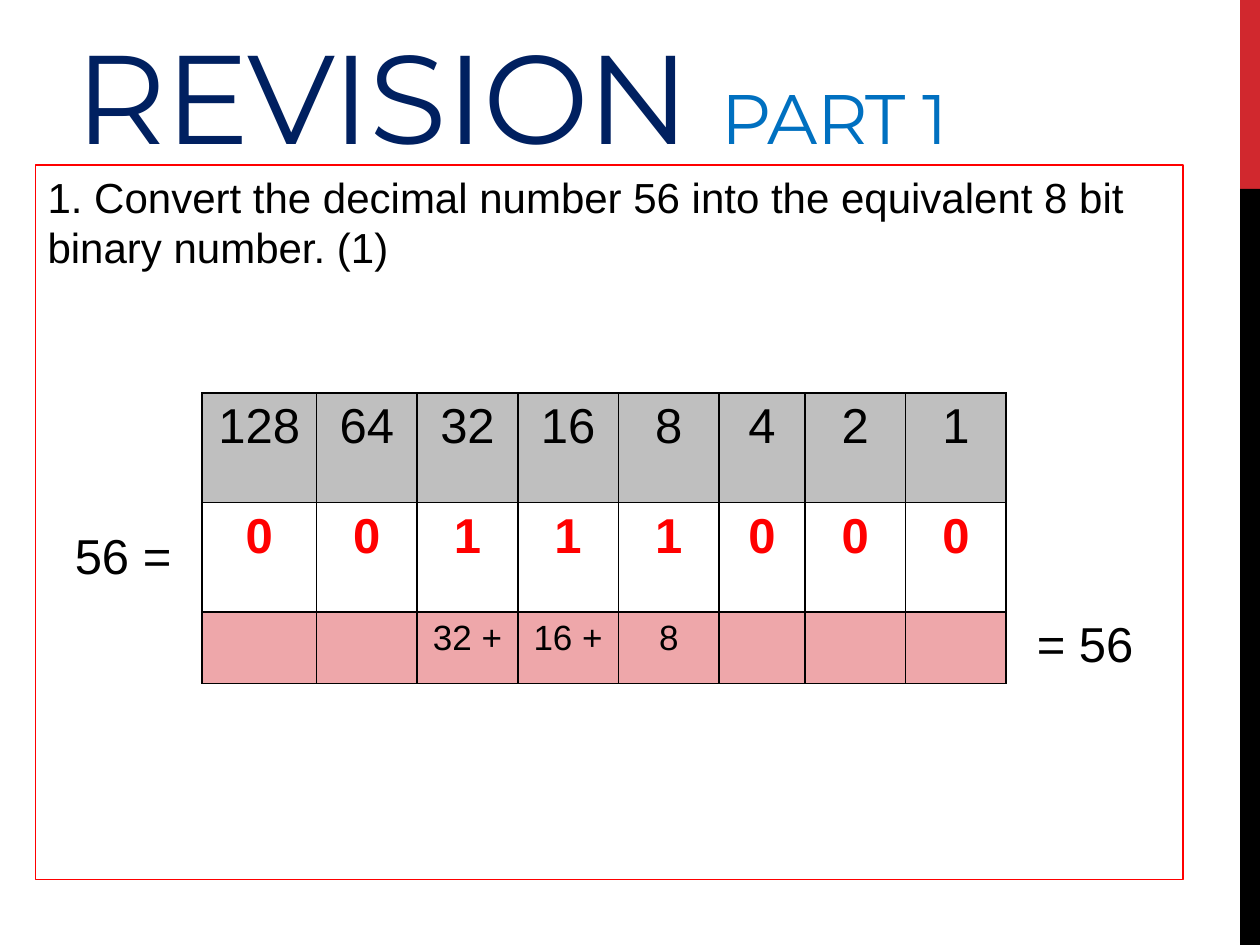
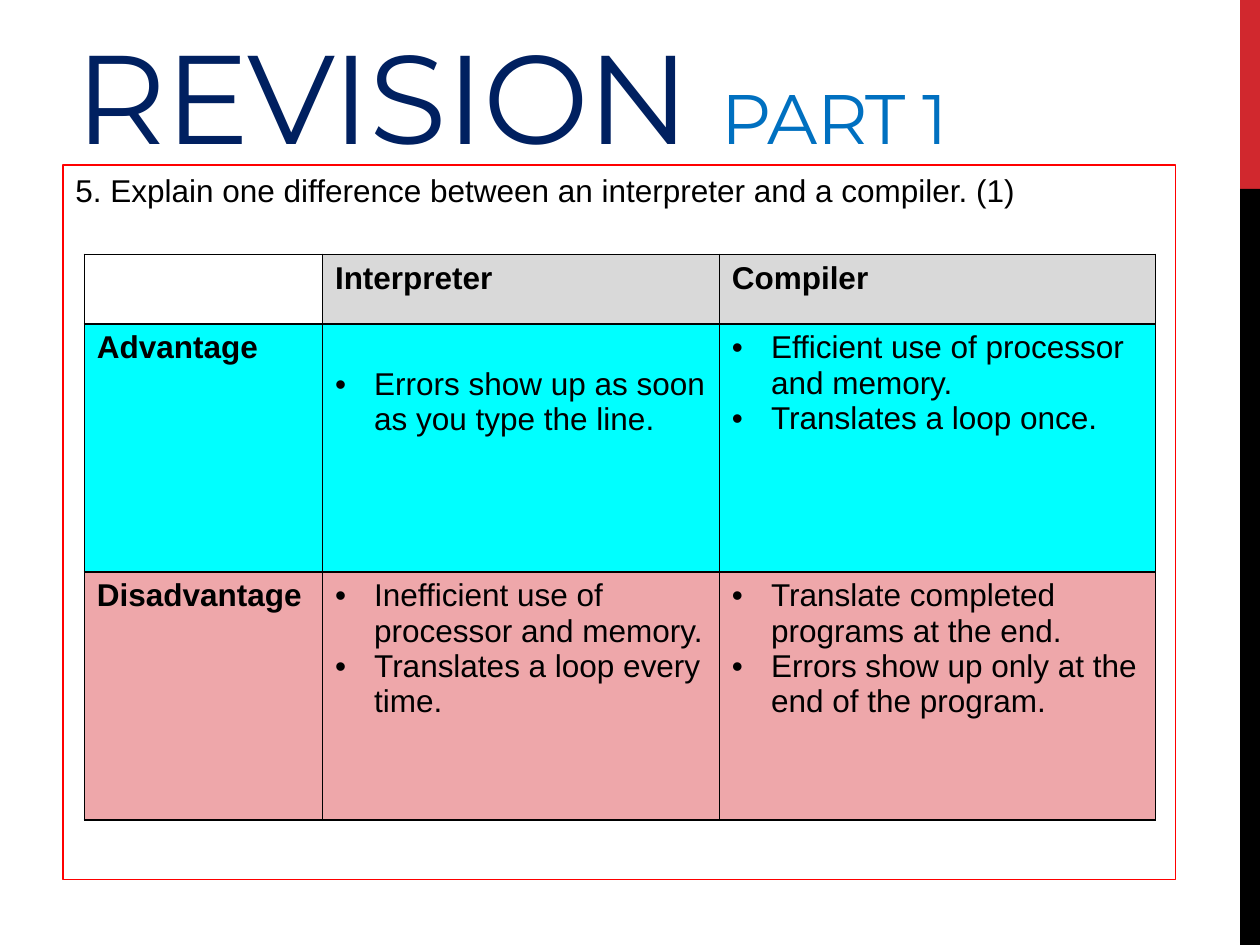
"""Build two revision slides: binary conversion and interpreter versus compiler."""
from lxml.etree import SubElement
from pptx import Presentation
from pptx.dml.color import RGBColor
from pptx.enum.shapes import MSO_SHAPE
from pptx.enum.text import MSO_ANCHOR, PP_ALIGN
from pptx.oxml.ns import qn
from pptx.util import Cm, Pt

COLOURS = {
    "black": "000000", "red": "FF0000", "band": "D1282E",
    "navy": "002060", "blue": "0070C0", "grey": "BFBFBF",
    "light grey": "D9D9D9", "cyan": "00FFFF", "pink": "EEA7AA",
}


def write_text(para, text, size=18, colour="black", font="Arial", bold=False,
               align=PP_ALIGN.LEFT, spacing=None, bullet=False):
    """Add one formatted span to a paragraph."""
    para.alignment = align
    span = para.add_run()
    span.text = text
    span.font.name = font
    span.font.size = Pt(size)
    span.font.bold = bold
    span.font.color.rgb = RGBColor.from_string(COLOURS[colour])
    if spacing is not None:
        span._r.get_or_add_rPr().set("spc", str(spacing))
    if bullet:
        properties = para._p.get_or_add_pPr()
        properties.set("marL", str(Cm(0.79)))
        properties.set("indent", str(-Cm(0.79)))
        SubElement(properties, qn("a:buFont"), typeface="Arial")
        SubElement(properties, qn("a:buChar"), char="•")


def style_cell(cell, fill=None, sides="LRTB"):
    """Set a cell's fill and draw black borders on the named sides."""
    properties = cell._tc.get_or_add_tcPr()
    for side in "LRTB":
        line = SubElement(properties, qn(f"a:ln{side}"), w=str(Pt(1)))
        if side in sides:
            paint = SubElement(line, qn("a:solidFill"))
            SubElement(paint, qn("a:srgbClr"), val=COLOURS["black"])
        else:
            SubElement(line, qn("a:noFill"))
    if fill:
        cell.fill.solid()
        cell.fill.fore_color.rgb = RGBColor.from_string(COLOURS[fill])
    else:
        cell.fill.background()


deck = Presentation()
deck.slide_width, deck.slide_height = Cm(25.4), Cm(19.05)

questions = [
    (0.71, 23.14, 24, "1. Convert the decimal number 56 into the equivalent 8 bit binary number. (1)",
     (0.89, 7.92), [3.18, 2.31] + [2.03] * 4 + [1.73] + [2.03] * 2 + [3.18], [2.21, 2.21, 1.4]),
    (1.27, 22.43, 18, "5. Explain one difference between an interpreter and a compiler. (1)",
     (1.7, 5.13), [4.8, 8, 8.79], [1.4, 5, 5]),
]
tables = []
for left, width, size, question, corner, columns, rows in questions:
    page = deck.slides.add_slide(deck.slide_layouts[6])
    for top, height, colour in [(0, 3.81, "band"), (3.81, 15.24, "black")]:
        band = page.shapes.add_shape(MSO_SHAPE.RECTANGLE, Cm(25), Cm(top), Cm(0.4), Cm(height))
        band.shadow.inherit = False
        band.fill.solid()
        band.fill.fore_color.rgb = RGBColor.from_string(COLOURS[colour])
        band.line.fill.background()

    title = page.shapes.add_textbox(Cm(1.27), Cm(0.13), Cm(21.82), Cm(3.3)).text_frame
    title.word_wrap = True
    title.vertical_anchor = MSO_ANCHOR.BOTTOM
    title.margin_bottom = 0
    heading = title.paragraphs[0]
    write_text(heading, "REVISION ", size=72, colour="navy", font="Montserrat", spacing=-60)
    write_text(heading, "PART 1", size=40, colour="blue", font="Montserrat", spacing=-60)

    box = page.shapes.add_shape(MSO_SHAPE.RECTANGLE, Cm(left), Cm(3.33), Cm(width), Cm(14.4))
    box.shadow.inherit = False
    box.fill.background()
    box.line.color.rgb = RGBColor.from_string(COLOURS["red"])
    box.line.width = Pt(0.75)
    box.text_frame.word_wrap = True
    box.text_frame.vertical_anchor = MSO_ANCHOR.TOP
    write_text(box.text_frame.paragraphs[0], question, size=size)

    table = page.shapes.add_table(len(rows), len(columns), Cm(corner[0]), Cm(corner[1]),
                                  Cm(sum(columns)), Cm(sum(rows))).table
    table.first_row = table.horz_banding = False
    for column, column_width in zip(table.columns, columns):
        column.width = Cm(column_width)
    for row, row_height in zip(table.rows, rows):
        row.height = Cm(row_height)
    tables.append(table)

binary_table, translator_table = tables

number = 56
places = [2 ** power for power in range(7, -1, -1)]
bits = [number // place % 2 for place in places]
binary_rows = [
    ([""] + [str(place) for place in places] + [""], "grey", {"size": 28}),
    ([f"{number} ="] + [str(bit) for bit in bits] + [""], None,
     {"size": 28, "colour": "red", "bold": True}),
    (["", "", "", "32 +", "16 +", "8", "", "", "", f"= {number}"], "pink", {"size": 20}),
]
for row, (texts, fill, style) in enumerate(binary_rows):
    for column, text in enumerate(texts):
        cell = binary_table.cell(row, column)
        outer_side = {0: "R", 9: "L"}.get(column)
        if outer_side:
            style_cell(cell, sides=outer_side)
            cell.vertical_anchor = MSO_ANCHOR.MIDDLE if column == 0 else MSO_ANCHOR.TOP
        else:
            style_cell(cell, fill)
        if text:
            write_text(cell.text_frame.paragraphs[0], text, align=PP_ALIGN.CENTER,
                       **({"size": 28} if outer_side else style))

translator_rows = [
    ("light grey", [[], ["Interpreter"], ["Compiler"]]),
    ("cyan", [["Advantage"],
              ["Errors show up as soon as you type the line."],
              ["Efficient use of processor and memory.", "Translates a loop once."]]),
    ("pink", [["Disadvantage"],
              ["Inefficient use of processor and memory.", "Translates a loop every time."],
              ["Translate completed programs at the end.",
               "Errors show up only at the end of the program."]]),
]
for row, (fill, entries) in enumerate(translator_rows):
    for column, points in enumerate(entries):
        cell = translator_table.cell(row, column)
        style_cell(cell, fill if points else None)
        is_label = row == 0 or column == 0
        for index, point in enumerate(points):
            frame = cell.text_frame
            para = frame.add_paragraph() if index else frame.paragraphs[0]
            write_text(para, point, bold=is_label, bullet=not is_label)
translator_table.cell(1, 1).margin_top = Cm(0.86)

deck.save("out.pptx")
